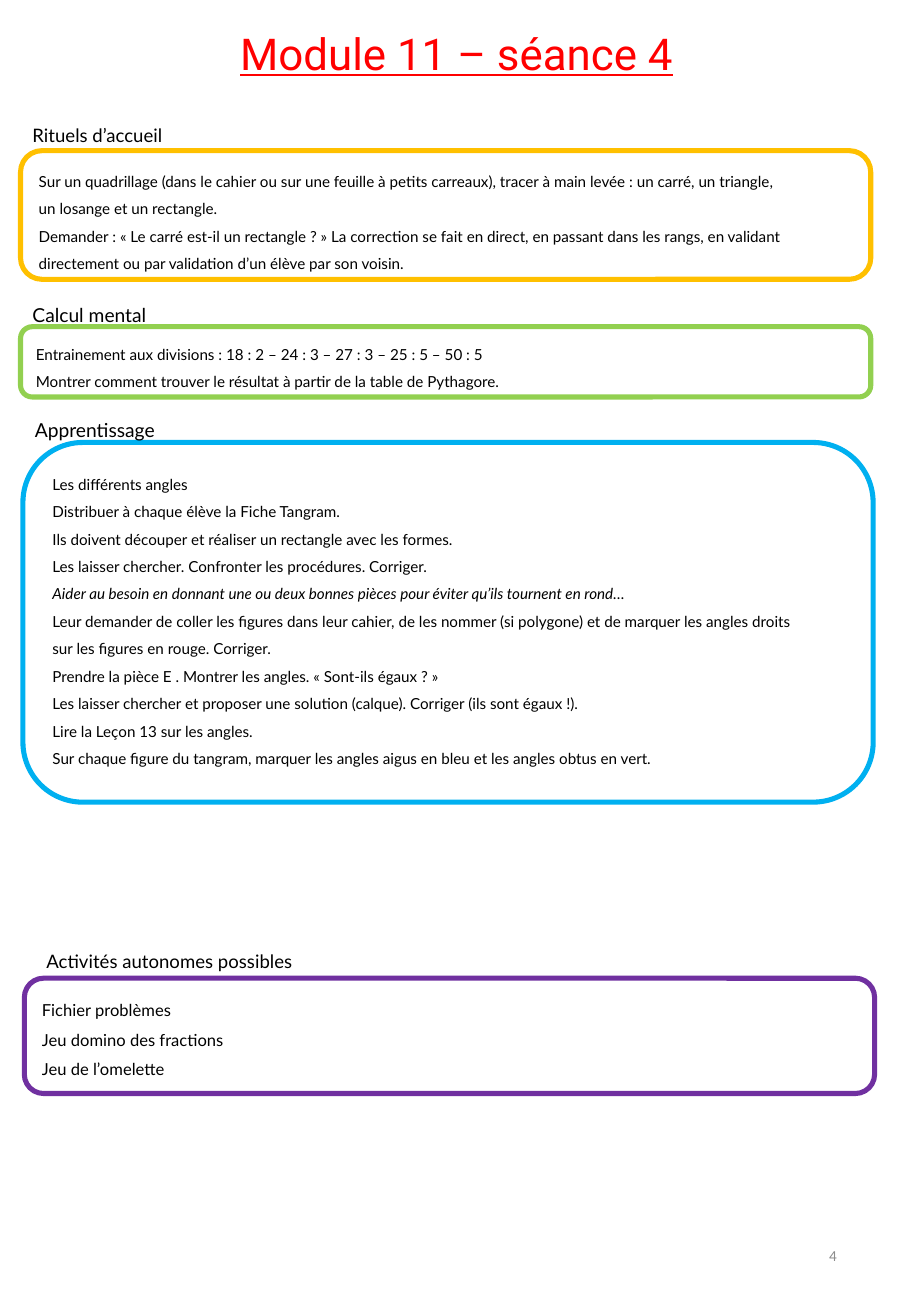
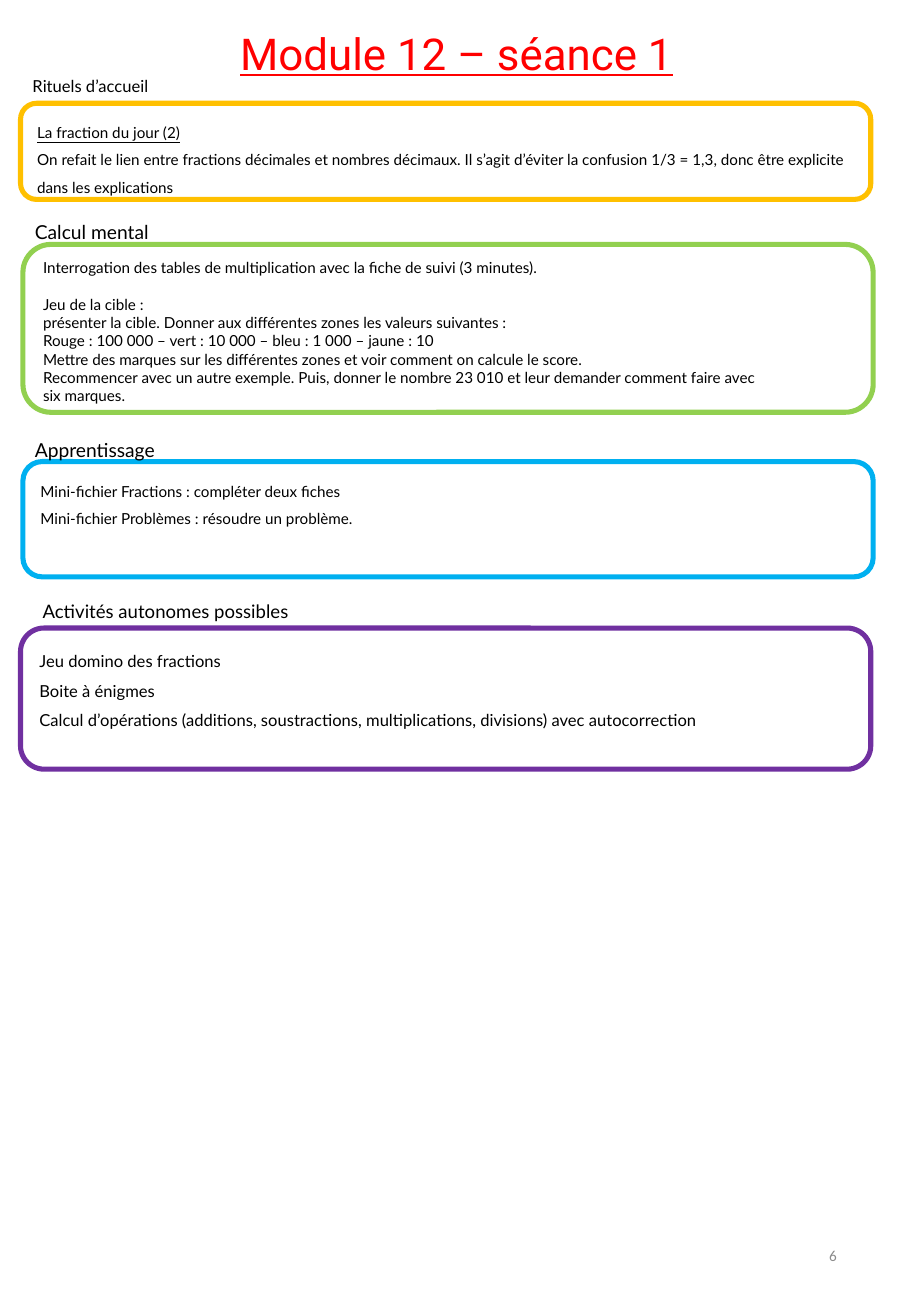
"""Build two lesson sheets made of a title, four framed sections and a page number."""

from dataclasses import dataclass, field
from typing import Any

from pptx import Presentation
from pptx.dml.color import RGBColor
from pptx.enum.shapes import MSO_SHAPE
from pptx.enum.text import MSO_ANCHOR, MSO_AUTO_SIZE, PP_ALIGN
from pptx.util import Cm, Pt

ROUNDED = MSO_SHAPE.ROUNDED_RECTANGLE
TOP, MIDDLE = MSO_ANCHOR.TOP, MSO_ANCHOR.MIDDLE
NO_AUTOFIT = MSO_AUTO_SIZE.NONE
LEFT, CENTER, RIGHT = PP_ALIGN.LEFT, PP_ALIGN.CENTER, PP_ALIGN.RIGHT

RED = RGBColor(0xFF, 0x00, 0x00)
BLACK = RGBColor(0x00, 0x00, 0x00)
GREY = RGBColor(0x8C, 0x8C, 0x8C)
AMBER = RGBColor(0xFF, 0xC0, 0x00)
GREEN = RGBColor(0x92, 0xD0, 0x50)
BLUE = RGBColor(0x00, 0xB0, 0xF0)
PURPLE = RGBColor(0x70, 0x30, 0xA0)

TITLE_ONLY = 5
TITLE_FONT = {"name": "Roboto", "size": Pt(26), "underline": True}
BODY_FONT = {"name": "Lato"}
NUMBER_FONT = {"name": "Calibri", "size": Pt(9)}
FRAME_WIDTH = Cm(17.78)
LABEL_HEIGHT = Cm(0.74)


@dataclass(frozen=True)
class Line:
    """One paragraph with its own character formats and space before."""

    text: str
    formats: dict[str, Any] = field(default_factory=dict)
    before: float = 0


@dataclass(frozen=True)
class Kind:
    """What a kind of section keeps from one sheet to the next."""

    label: str
    color: RGBColor
    label_rise: float
    label_width: float
    label_size: float
    label_indent: float = 0
    body_size: float = 9


@dataclass(frozen=True)
class Section:
    """A labelled frame placed on a sheet, in centimetres."""

    kind: Kind
    left: float
    top: float
    height: float
    lines: list[Line]
    spacing: float = 1.5
    label_size: float | None = None


@dataclass(frozen=True)
class Sheet:
    """The content of one slide."""

    title: str
    number: str
    sections: list[Section]


WELCOME = Kind("Rituels d’accueil", AMBER, 0.69, 4.88, 11)
MENTAL = Kind("Calcul mental", GREEN, 0.62, 5.41, 11.4)
LEARNING = Kind("Apprentissage", BLUE, 0.62, 4.88, 11.4)
AUTONOMY = Kind("Activités autonomes possibles", PURPLE, 0.71, 8.23, 11, 0.21, 9.8)

SHEETS = [
    Sheet("Module 11 – séance 4", "4", [
        Section(WELCOME, 0.43, 3.15, 2.69, [
            Line("Sur un quadrillage (dans le cahier ou sur une feuille à petits carreaux), "
                 "tracer à main levée : un carré, un triangle,"),
            Line("un losange et un rectangle."),
            Line("Demander : « Le carré est-il un rectangle ? » La correction se fait en direct, "
                 "en passant dans les rangs, en validant directement ou par validation "
                 "d’un élève par son voisin."),
        ]),
        Section(MENTAL, 0.43, 6.83, 1.47, [
            Line("Entrainement aux divisions : 18 : 2 – 24 : 3 – 27 : 3 – 25 : 5 – 50 : 5"),
            Line("Montrer comment trouver le résultat à partir de la table de Pythagore."),
        ]),
        Section(LEARNING, 0.48, 9.25, 7.52, [
            Line("Les différents angles"),
            Line("Distribuer à chaque élève la Fiche Tangram."),
            Line("Ils doivent découper et réaliser un rectangle avec les formes."),
            Line("Les laisser chercher. Confronter les procédures. Corriger."),
            Line("Aider au besoin en donnant une ou deux bonnes pièces "
                 "pour éviter qu’ils tournent en rond…", {"italic": True}),
            Line("Leur demander de coller les figures dans leur cahier, de les nommer "
                 "(si polygone) et de marquer les angles droits"),
            Line("sur les figures en rouge. Corriger."),
            Line("Prendre la pièce E . Montrer les angles. « Sont-ils égaux ? »"),
            Line("Les laisser chercher et proposer une solution (calque). "
                 "Corriger (ils sont égaux !)."),
            Line("Lire la Leçon 13 sur les angles."),
            Line("Sur chaque figure du tangram, marquer les angles aigus en bleu "
                 "et les angles obtus en vert."),
        ]),
        Section(AUTONOMY, 0.51, 20.45, 2.41, [
            Line("Fichier problèmes"),
            Line("Jeu domino des fractions"),
            Line("Jeu de l’omelette"),
        ]),
    ]),
    Sheet("Module 12 – séance 1", "6", [
        Section(WELCOME, 0.43, 2.16, 2.01, [
            Line("La fraction du jour (2)", {"underline": True}),
            Line("On refait le lien entre fractions décimales et nombres décimaux. Il s’agit "
                 "d’éviter la confusion 1/3 = 1,3, donc être explicite dans les explications"),
        ], label_size=9.8),
        Section(MENTAL, 0.48, 5.11, 3.51, [
            Line("Interrogation des tables de multiplication avec la fiche de suivi (3 minutes)."),
            Line("Jeu de la cible :", before=10.8),
            Line("présenter la cible. Donner aux différentes zones les valeurs suivantes :"),
            Line("Rouge : 100 000 – vert : 10 000 – bleu : 1 000 – jaune : 10"),
            Line("Mettre des marques sur les différentes zones et voir comment "
                 "on calcule le score."),
            Line("Recommencer avec un autre exemple. Puis, donner le nombre 23 010 "
                 "et leur demander comment faire avec"),
            Line("six marques."),
        ], spacing=1.0),
        Section(LEARNING, 0.48, 9.65, 2.41, [
            Line("Mini-fichier Fractions : compléter deux fiches"),
            Line("Mini-fichier Problèmes : résoudre un problème."),
        ]),
        Section(AUTONOMY, 0.43, 13.13, 2.95, [
            Line("Jeu domino des fractions"),
            Line("Boite à énigmes"),
            Line("Calcul d’opérations (additions, soustractions, multiplications, divisions) "
                 "avec autocorrection"),
        ]),
    ]),
]


def write(shape, lines: list[Line], font: dict[str, Any], color: RGBColor = BLACK,
          align=LEFT, anchor=TOP, spacing: float = 1.0) -> None:
    """Fill a shape with formatted paragraphs."""
    frame = shape.text_frame
    frame_formats = {"word_wrap": True, "auto_size": NO_AUTOFIT, "vertical_anchor": anchor}
    for name, value in frame_formats.items():
        setattr(frame, name, value)
    for index, line in enumerate(lines):
        para = frame.paragraphs[0] if index == 0 else frame.add_paragraph()
        para_formats = {"alignment": align, "line_spacing": spacing,
                        "space_before": Pt(line.before)}
        for name, value in para_formats.items():
            setattr(para, name, value)
        span = para.add_run()
        span.text = line.text
        span.font.color.rgb = color
        for name, value in (font | line.formats).items():
            setattr(span.font, name, value)


def draw_section(page, section: Section) -> None:
    """Draw a rounded frame with its text and the label above it."""
    kind = section.kind
    box = page.shapes.add_shape(ROUNDED, Cm(section.left), Cm(section.top),
                                FRAME_WIDTH, Cm(section.height))
    box.shadow.inherit = False
    box.fill.background()
    box.line.color.rgb = kind.color
    box.line.width = Pt(3)
    write(box, section.lines, BODY_FONT | {"size": Pt(kind.body_size)},
          spacing=section.spacing)
    label = page.shapes.add_textbox(Cm(section.left + kind.label_indent),
                                    Cm(section.top - kind.label_rise),
                                    Cm(kind.label_width), LABEL_HEIGHT)
    size = section.label_size or kind.label_size
    write(label, [Line(kind.label)], BODY_FONT | {"size": Pt(size)})


def draw_sheet(deck, sheet: Sheet) -> None:
    """Add one slide with its title, sections and page number."""
    page = deck.slides.add_slide(deck.slide_layouts[TITLE_ONLY])
    title = page.shapes.title
    place = {"left": Cm(4.62), "top": Cm(0.43), "width": Cm(9.86), "height": Cm(1.37)}
    for name, value in place.items():
        setattr(title, name, value)
    write(title, [Line(sheet.title)], TITLE_FONT, RED, CENTER, MIDDLE)
    for section in sheet.sections:
        draw_section(page, section)
    number = page.shapes.add_textbox(Cm(13.46), Cm(25.5), Cm(4.29), Cm(1.47))
    write(number, [Line(sheet.number)], NUMBER_FONT, GREY, RIGHT, MIDDLE)


def main() -> None:
    """Build and save the deck."""
    deck = Presentation()
    deck.slide_width = Cm(19.05)
    deck.slide_height = Cm(27.51)
    for sheet in SHEETS:
        draw_sheet(deck, sheet)
    deck.save("out.pptx")


if __name__ == "__main__":
    main()
